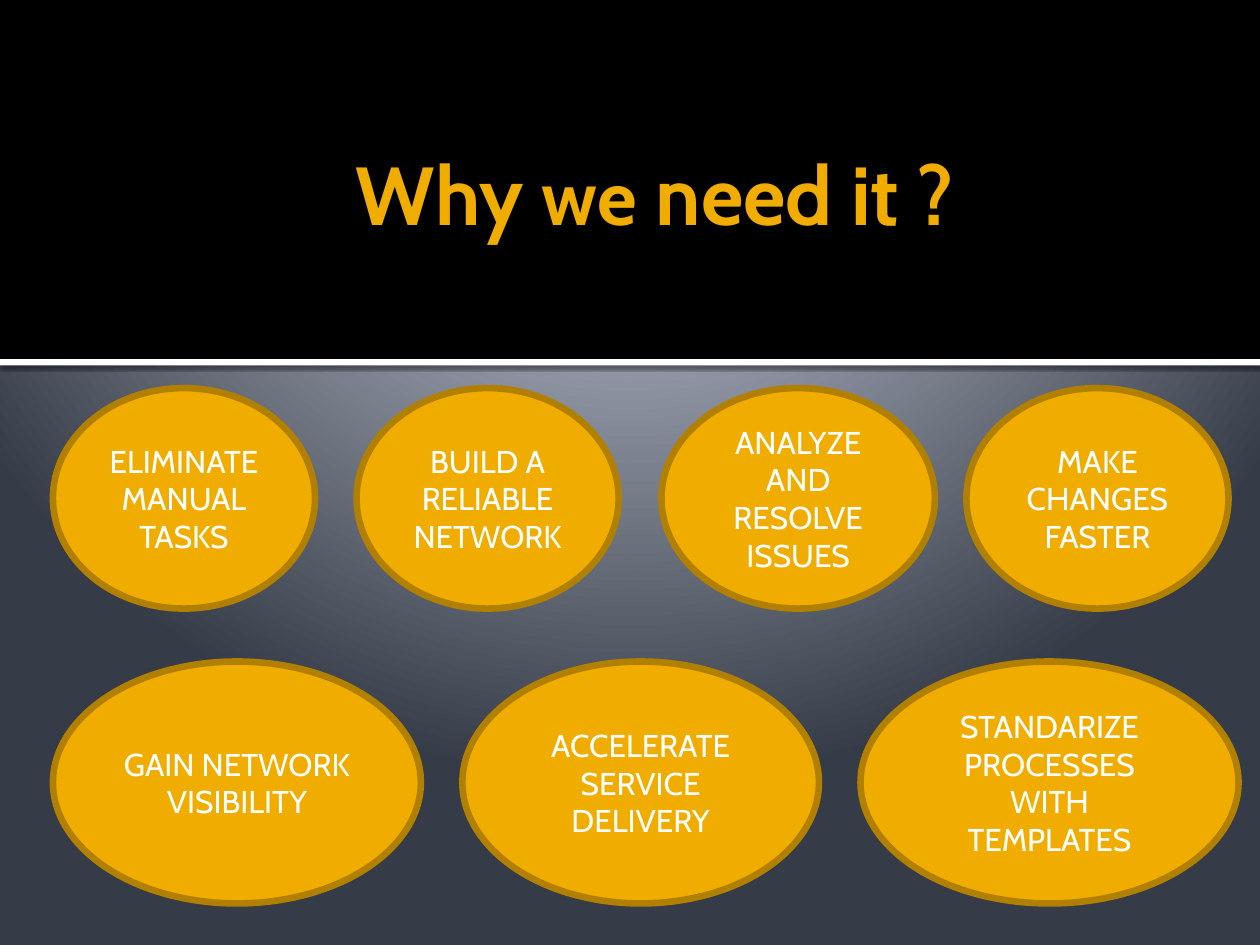
from pptx import Presentation
from pptx.dml.color import RGBColor
from pptx.enum.shapes import MSO_SHAPE
from pptx.enum.text import MSO_ANCHOR, MSO_AUTO_SIZE, PP_ALIGN
from pptx.oxml import parse_xml
from pptx.oxml.ns import nsdecls, qn
from pptx.util import Inches, Pt

AMBER = RGBColor(0xF0, 0xAD, 0x00)
DARK_AMBER = RGBColor(0xB2, 0x80, 0x00)
BLACK = RGBColor(0x00, 0x00, 0x00)
WHITE = RGBColor(0xFF, 0xFF, 0xFF)
FONT = "Cabin"

presentation = Presentation()
presentation.slide_width = Inches(10)
presentation.slide_height = Inches(7.5)
slide = presentation.slides.add_slide(presentation.slide_layouts[5])

# Background: radial gradient centred above the slide
stops = [(0, "C1C5D3"), (12, "C1C5D3"), (20, "BFC4D2"), (100, "353B47")]
stop_xml = "".join(
    f'<a:gs pos="{position * 1000}"><a:srgbClr val="{color}"/></a:gs>'
    for position, color in stops
)
slide.background.fill.gradient()
gradient = slide.element.find(".//" + qn("a:gradFill"))
gradient.getparent().replace(gradient, parse_xml(
    f'<a:gradFill {nsdecls("a")} rotWithShape="1"><a:gsLst>{stop_xml}</a:gsLst>'
    '<a:path path="circle">'
    '<a:fillToRect l="10000" t="-25000" r="10000" b="125000"/>'
    '</a:path></a:gradFill>'
))

# Header band and white rule, behind the title
title = slide.shapes.title
for top, height, color in [(0, 2.85, BLACK), (2.85, 0.05, WHITE)]:
    band = slide.shapes.add_shape(
        MSO_SHAPE.RECTANGLE, 0, Inches(top), Inches(10), Inches(height))
    band.shadow.inherit = False
    band.fill.solid()
    band.fill.fore_color.rgb = color
    band.line.fill.background()
    title.element.addprevious(band.element)

# Soft shadow under the white rule
band.element.spPr.find(qn("a:effectLst")).append(parse_xml(
    f'<a:outerShdw {nsdecls("a")} blurRad="{Pt(2.5)}" dist="{Pt(0.8)}" '
    'dir="5400000" algn="tl" rotWithShape="0">'
    '<a:srgbClr val="000000"><a:alpha val="60000"/></a:srgbClr></a:outerShdw>'
))

# Title
title.left, title.top = Inches(0.82), Inches(0.13)
title.width, title.height = Inches(8.76), Inches(1.79)
text_frame = title.text_frame
text_frame.word_wrap = True
text_frame.auto_size = MSO_AUTO_SIZE.NONE
text_frame.vertical_anchor = MSO_ANCHOR.BOTTOM
text_frame.margin_top = text_frame.margin_bottom = 0
paragraph = text_frame.paragraphs[0]
paragraph.alignment = PP_ALIGN.CENTER
paragraph.font.name = FONT
paragraph.font.bold = True
paragraph.font.color.rgb = AMBER
for text, size in [("Why ", 47), ("we", 44), (" need it ?", 47)]:
    run = paragraph.add_run()
    run.text = text
    run.font.size = Pt(size)

# Two rows of ellipses: top, height, then left, width and text of each
rows = [
    (3.08, 1.75, [
        (0.42, 2.08, "ELIMINATE MANUAL TASKS"),
        (2.83, 2.08, "BUILD A RELIABLE NETWORK"),
        (5.25, 2.17, "ANALYZE AND RESOLVE ISSUES"),
        (7.67, 2.08, "MAKE CHANGES FASTER"),
    ]),
    (5.25, 1.92, [
        (0.42, 2.92, "GAIN NETWORK VISIBILITY"),
        (3.67, 2.83, "ACCELERATE SERVICE DELIVERY"),
        (6.83, 3, "STANDARIZE PROCESSES WITH TEMPLATES"),
    ]),
]
for top, height, reasons in rows:
    for left, width, text in reasons:
        ellipse = slide.shapes.add_shape(
            MSO_SHAPE.OVAL, Inches(left), Inches(top), Inches(width), Inches(height))
        ellipse.shadow.inherit = False
        ellipse.fill.solid()
        ellipse.fill.fore_color.rgb = AMBER
        ellipse.line.color.rgb = DARK_AMBER
        ellipse.line.width = Pt(3.78)
        ellipse.text_frame.word_wrap = True
        ellipse.text_frame.vertical_anchor = MSO_ANCHOR.MIDDLE
        paragraph = ellipse.text_frame.paragraphs[0]
        paragraph.text = text
        paragraph.alignment = PP_ALIGN.CENTER
        paragraph.font.name = FONT
        paragraph.font.size = Pt(18)
        paragraph.font.color.rgb = WHITE

presentation.save("out.pptx")
